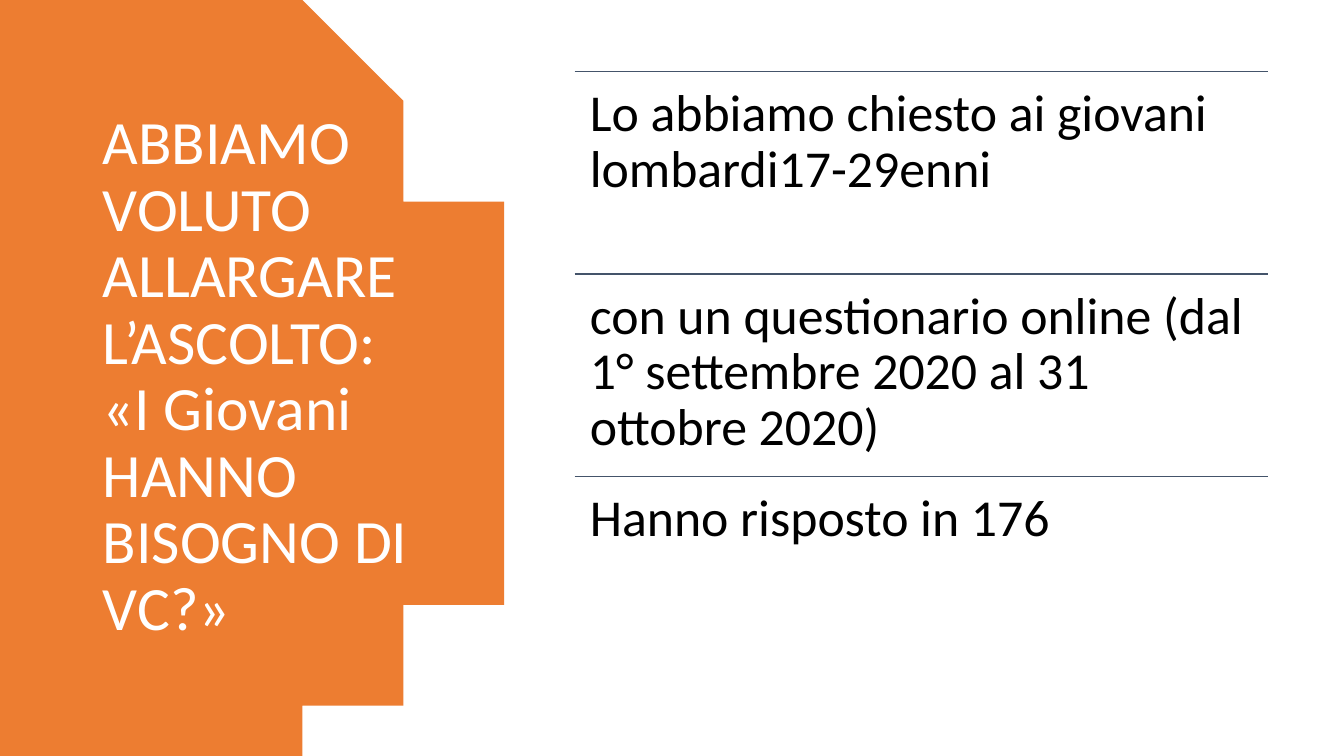
from dataclasses import dataclass

from lxml.etree import SubElement
from pptx import Presentation
from pptx.dml.color import RGBColor
from pptx.enum.shapes import MSO_CONNECTOR
from pptx.enum.text import MSO_ANCHOR, MSO_AUTO_SIZE, PP_ALIGN
from pptx.oxml.ns import qn
from pptx.util import Inches, Pt


@dataclass(frozen=True)
class Theme:
    font: str = "Calibri"
    panel: RGBColor = RGBColor(0xED, 0x7D, 0x31)
    rule: RGBColor = RGBColor(0x44, 0x54, 0x6A)
    title: RGBColor = RGBColor(0xFF, 0xFF, 0xFF)
    body: RGBColor = RGBColor(0x00, 0x00, 0x00)
    title_size: int = 44
    body_size: int = 37
    rule_width: int = 1


theme = Theme()


def write(sp, text, size, color, anchor=MSO_ANCHOR.TOP, inset=0.1):
    tf = sp.text_frame
    tf.word_wrap = True
    tf.auto_size = MSO_AUTO_SIZE.NONE
    tf.vertical_anchor = anchor
    tf.margin_left = tf.margin_right = Inches(inset)
    tf.margin_top = tf.margin_bottom = Inches(inset if inset > 0.1 else 0.05)
    p = tf.paragraphs[0]
    p.text = text
    p.alignment = PP_ALIGN.LEFT
    p.line_spacing = 0.9
    for r in p.runs:
        r.font.name = theme.font
        r.font.size = Pt(size)
        r.font.color.rgb = color


prs = Presentation()
prs.slide_width, prs.slide_height = Inches(13.33), Inches(7.5)
s = prs.slides.add_slide(prs.slide_layouts[5])

steps = 40
upper = []
for i in range(steps + 1):
    t = i / steps
    u = 1 - t
    x = 2.83 * u**3 + 3 * 4.09 * u**2 * t + 3 * 4.93 * u * t**2 + 4.93 * t**3
    y = 3 * 0.77 * u**2 * t + 3 * 2.16 * u * t**2 + 3.75 * t**3
    upper.append((x, y))
lower = [(x, 7.5 - y) for x, y in reversed(upper[:-1])]
fb = s.shapes.build_freeform(0, 0, scale=Inches(1))
fb.add_line_segments(upper + lower + [(0, 7.5)], close=True)
panel = fb.convert_to_shape()
panel.shadow.inherit = False
panel.fill.solid()
panel.fill.fore_color.rgb = theme.panel
panel.line.fill.background()

title = s.shapes.title
title.left, title.top = Inches(0.92), Inches(0.7)
title.width, title.height = Inches(3.23), Inches(6.09)
write(title, "ABBIAMO VOLUTO ALLARGARE L’ASCOLTO: \v«I Giovani HANNO BISOGNO DI VC?»",
      size=theme.title_size, color=theme.title, anchor=MSO_ANCHOR.MIDDLE)
title.element.addprevious(panel.element)

statements = [
    "Lo abbiamo chiesto ai giovani lombardi17-29enni",
    "con un questionario online (dal 1° settembre 2020 al 31 ottobre 2020)",
    "Hanno risposto in 176",
]
left, top, width, row = 5.7, 0.71, 6.88, 2.01
group = s.shapes.add_group_shape()
for i, text in enumerate(statements):
    y = top + i * row
    rule = group.shapes.add_connector(
        MSO_CONNECTOR.STRAIGHT, Inches(left), Inches(y), Inches(left + width), Inches(y))
    rule.line.color.rgb = theme.rule
    rule.line.width = Pt(theme.rule_width)
    SubElement(rule.element.spPr, qn("a:effectLst"))
    sp = group.shapes.add_textbox(Inches(left), Inches(y), Inches(width), Inches(row))
    write(sp, text, size=theme.body_size, color=theme.body, inset=0.15)

prs.save("out.pptx")
